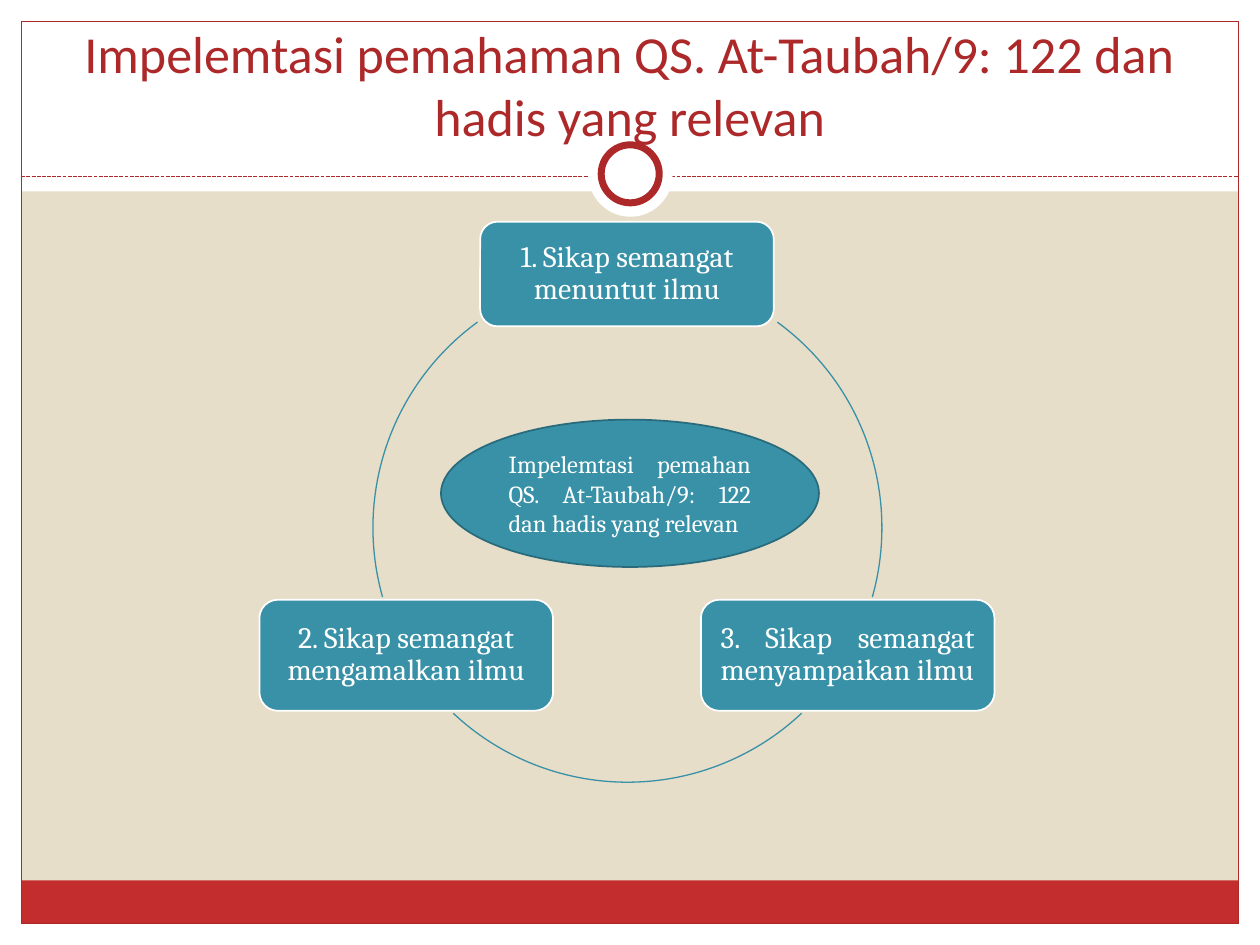
"""Build a slide with a three-step cycle around a central topic."""
from pptx import Presentation
from pptx.dml.color import RGBColor
from pptx.enum.dml import MSO_LINE_DASH_STYLE as Dash
from pptx.enum.shapes import MSO_CONNECTOR, MSO_SHAPE as Shape
from pptx.enum.text import MSO_ANCHOR, PP_ALIGN as Align
from pptx.oxml import parse_xml
from pptx.util import Cm, Pt

COLORS = {"sand": "E7DEC9", "white": "FFFFFF", "red": "C32D2E",
          "dark_red": "AC2829", "teal": "3891A7", "dark_teal": "296B7C"}
WIDTH, HEIGHT, MARGIN = 25.4, 19.05, 0.43
INNER_WIDTH = WIDTH - 2 * MARGIN
INNER_HEIGHT = HEIGHT - 2 * MARGIN
RULE_TOP = 3.56

TITLE = "Impelemtasi pemahaman QS. At-Taubah/9: 122 dan hadis yang relevan"
TOPIC = "Impelemtasi pemahan QS. At-Taubah/9: 122 dan hadis yang relevan"
STEPS = [
    ("1. Sikap semangat menuntut ilmu", (9.68, 4.47, 5.92, 2.11), Align.CENTER),
    ("3. Sikap semangat menyampaikan ilmu", (14.13, 12.09, 5.92, 2.24), Align.JUSTIFY),
    ("2. Sikap semangat mengamalkan ilmu", (5.23, 12.09, 5.92, 2.24), Align.CENTER),
]
CYCLE = (7.52, 5.51, 10.26, 10.26)
ARC_ANGLES = [(306.1, 15.8), (46.8, 133.2), (164.2, 233.9)]
WHITE_BANDS = [
    (0, HEIGHT - MARGIN, WIDTH, MARGIN),
    (0, 0, WIDTH, 3.86),
    (0, 0, MARGIN, HEIGHT),
    (WIDTH - MARGIN, 0, MARGIN, HEIGHT),
]


def color(name):
    return RGBColor.from_string(COLORS[name])


def add_shape(page, kind, area, fill=None, line=None, weight=0.75):
    shape = page.shapes.add_shape(kind, *map(Cm, area))
    shape.shadow.inherit = False
    if fill:
        shape.fill.solid()
        shape.fill.fore_color.rgb = color(fill)
    else:
        shape.fill.background()
    if line:
        shape.line.color.rgb = color(line)
        shape.line.width = Pt(weight)
    else:
        shape.line.fill.background()
    return shape


def write(box, text, size, font="Cambria", ink="white", align=Align.CENTER,
          spacing=1.0, inset=None):
    frame = box.text_frame
    frame.word_wrap = True
    frame.vertical_anchor = MSO_ANCHOR.MIDDLE
    if inset is not None:
        frame.margin_left = frame.margin_right = Cm(inset)
        frame.margin_top = frame.margin_bottom = Cm(inset)
    para = frame.paragraphs[0]
    para.alignment = align
    para.line_spacing = spacing
    span = para.add_run()
    span.text = text
    span.font.size = Pt(size)
    span.font.name = font
    span.font.color.rgb = color(ink)


def add_rule(page):
    rule = page.shapes.add_connector(MSO_CONNECTOR.STRAIGHT, Cm(MARGIN), Cm(RULE_TOP),
                                     Cm(WIDTH - MARGIN), Cm(RULE_TOP))
    rule.line.color.rgb = color("dark_red")
    rule.line.width = Pt(0.75)
    rule.line.dash_style = Dash.SQUARE_DOT
    rule._element.spPr.append(parse_xml(
        '<a:effectLst xmlns:a="http://schemas.openxmlformats.org/drawingml/2006/main"/>'))


def add_frame(page):
    for band in WHITE_BANDS:
        add_shape(page, Shape.RECTANGLE, band, fill="white")
    add_shape(page, Shape.RECTANGLE, (MARGIN, 17.75, INNER_WIDTH, 0.87), fill="red")
    add_shape(page, Shape.RECTANGLE, (MARGIN, MARGIN, INNER_WIDTH, INNER_HEIGHT),
              line="dark_red")
    add_rule(page)
    add_shape(page, Shape.OVAL, (11.86, 2.67, 1.7, 1.7), fill="white")
    add_shape(page, Shape.OVAL, (12.12, 2.92, 1.17, 1.17), fill="white",
              line="dark_red", weight=4)


def add_cycle(page):
    for (text, area, align), angles in zip(STEPS, ARC_ANGLES):
        step = add_shape(page, Shape.ROUNDED_RECTANGLE, area, "teal", "white", 1)
        write(step, text, 17, align=align, spacing=0.9, inset=0.29)
        arc = add_shape(page, Shape.ARC, CYCLE, line="teal")
        for index, angle in enumerate(angles):
            arc.adjustments[index] = angle * 0.6
    topic = add_shape(page, Shape.OVAL, (8.89, 8.46, 7.62, 2.97), "teal", "dark_teal", 1)
    write(topic, TOPIC, 14, align=Align.JUSTIFY)


def main():
    deck = Presentation()
    deck.slide_width, deck.slide_height = Cm(WIDTH), Cm(HEIGHT)
    page = deck.slides.add_slide(deck.slide_layouts[6])
    page.background.fill.solid()
    page.background.fill.fore_color.rgb = color("sand")
    add_frame(page)
    title = page.shapes.add_textbox(Cm(0.85), Cm(0.64), Cm(23.7), Cm(2.11))
    write(title, TITLE, 29.7, font="Calibri", ink="dark_red")
    add_cycle(page)
    deck.save("out.pptx")


if __name__ == "__main__":
    main()
